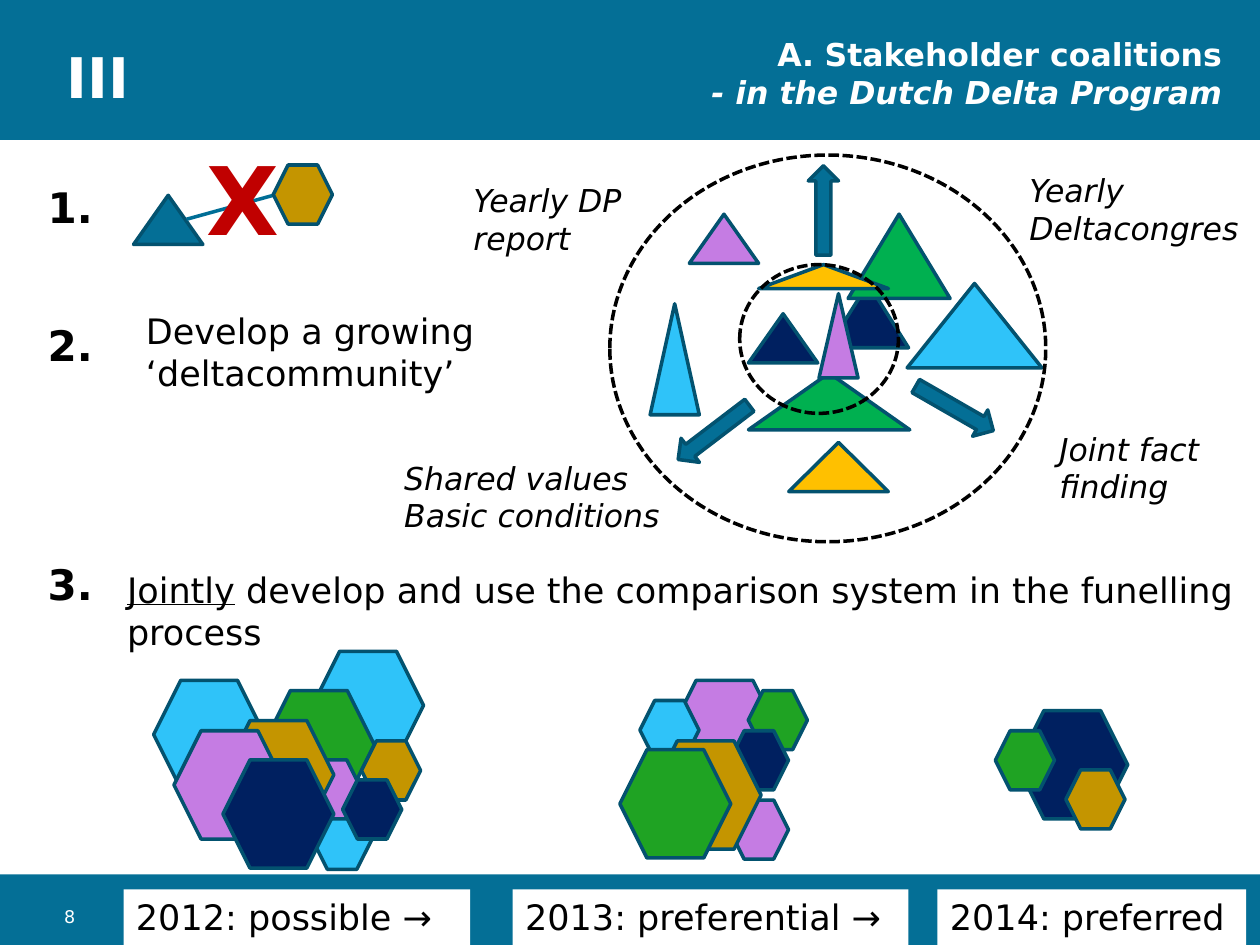
from dataclasses import dataclass

from lxml import etree
from pptx import Presentation
from pptx.dml.color import RGBColor
from pptx.enum import dml, shapes, text
from pptx.oxml import ns
from pptx.util import Pt


@dataclass(frozen=True)
class Theme:
    font: str = "DejaVu Sans"
    teal: str = "046F96"
    edge: str = "03526F"
    link: str = "006E96"
    navy: str = "002060"
    sky: str = "2FC3F9"
    violet: str = "C57CE3"
    gold: str = "C49500"
    yellow: str = "FFC000"
    leaf: str = "1FA323"
    green: str = "00B050"
    red: str = "C00000"
    black: str = "000000"
    white: str = "FFFFFF"
    tiny: int = 10
    label: int = 18
    body: int = 20
    number: int = 24
    chapter: int = 32
    cross: int = 54
    line: int = 2


T = Theme()
KIND = shapes.MSO_SHAPE
LARGE, SMALL = (63.4, 61.9), (33.8, 33.8)


def write(tf, lines, size, color=T.black, align=text.PP_ALIGN.LEFT):
    """Each line is a list of runs: (wording, style letters from b, i, u)."""
    tf.word_wrap = True
    tf.vertical_anchor = text.MSO_ANCHOR.TOP
    for n, runs in enumerate(lines):
        p = tf.paragraphs[0] if n == 0 else tf.add_paragraph()
        p.alignment = align
        for wording, style in runs:
            r = p.add_run()
            r.text = wording
            f = r.font
            f.name, f.size = T.font, Pt(size)
            f.color.rgb = RGBColor.from_string(color)
            f.bold, f.italic, f.underline = (k in style for k in "biu")


def add_text(s, box, lines, size, color=T.black):
    tf = s.shapes.add_textbox(*map(Pt, box)).text_frame
    write(tf, lines, size, color)
    tf.auto_size = text.MSO_AUTO_SIZE.SHAPE_TO_FIT_TEXT
    return tf


def add_shape(parent, kind, box, fill=None, line=T.edge, rotation=0):
    sp = parent.add_shape(kind, *map(Pt, box))
    sp.shadow.inherit = False
    sp.rotation = rotation
    if fill:
        sp.fill.solid()
        sp.fill.fore_color.rgb = RGBColor.from_string(fill)
    else:
        sp.fill.background()
    if line:
        sp.line.color.rgb = RGBColor.from_string(line)
        sp.line.width = Pt(T.line)
    else:
        sp.line.fill.background()
    return sp


def add_band(s, box):
    band = add_shape(s.shapes, KIND.RECTANGLE, box, T.teal, None).element
    band.getparent().insert(2, band)  # behind the title


def header(s, box):
    x, y, w, h = box
    add_band(s, box)
    title = s.shapes.title
    title.left, title.top, title.width, title.height = map(
        Pt, (x + 388.1, y + 16.6, 317.5, 51.1))
    tf = title.text_frame
    # The first line is lettered, both lines hang
    for p in (tf.paragraphs[0], tf.add_paragraph()):
        pPr = p._p.get_or_add_pPr()
        pPr.set("marL", str(Pt(27)))
        pPr.set("indent", str(-Pt(27)))
    etree.SubElement(tf.paragraphs[0]._p.pPr, ns.qn("a:buAutoNum"),
                     type="alphaUcPeriod")
    wording = (("Stakeholder coalitions", False),
               ("- in the Dutch Delta Program", True))
    tf.word_wrap = True
    tf.auto_size = text.MSO_AUTO_SIZE.NONE
    tf.vertical_anchor = text.MSO_ANCHOR.TOP
    for p, (line, italic) in zip(tf.paragraphs, wording):
        p.alignment = text.PP_ALIGN.RIGHT
        r = p.add_run()
        r.text = line
        f = r.font
        f.name, f.size, f.bold, f.italic = T.font, Pt(T.label), True, italic
        f.color.rgb = RGBColor.from_string(T.white)
    add_text(s, (x + 31, y + 20.9, 79.2, 46.1), [[("III", "b")]],
             T.chapter, T.white)


def points(s, x):
    """Numbers down the left side and the wording of points 2 and 3."""
    for number, y in (("1.", 100.1), ("2.", 179.3), ("3.", 315.4)):
        add_text(s, (x, y, 62.6, 36), [[(number, "b")]], T.number)
    add_text(s, (x + 56.1, 173.5, 209.5, 55.4),
             [[("Develop a growing ‘deltacommunity’", "")]], T.body)
    add_text(s, (x + 45.3, 321.1, 654.5, 55.4),
             [[("Jointly", "u"),
               (" develop and use the comparison system in the funelling "
                "process", "")]], T.body)


def broken_link(s, x, y):
    """Triangle linked to a hexagon, crossed out."""
    parts = s.shapes.add_group_shape().shapes
    add_shape(parts, KIND.ISOSCELES_TRIANGLE, (x, y + 17.3, 39.6, 28.1), T.teal)
    link = parts.add_connector(shapes.MSO_CONNECTOR.STRAIGHT,
                               *map(Pt, (x + 30.3, y + 31, x + 79.9, y + 17.3)))
    link.line.color.rgb = RGBColor.from_string(T.link)
    link.line.width = Pt(T.line)
    etree.SubElement(link.element.spPr, ns.qn("a:effectLst"))
    add_shape(parts, KIND.HEXAGON, (x + 79.9, y, *SMALL), T.gold)
    add_text(s, (x + 34.6, y - 17.3, 79.2, 72.7), [[("X", "b")]],
             T.cross, T.red)


def community(s, box):
    """Stakeholders in two dashed rings, with arrows pointing outwards."""
    x, y, w, h = box
    for fill, dx, dy, tw, th in (
            (T.navy, 79.2, 90.7, 39.6, 28.1), (T.sky, 23, 85, 28.1, 63.4),
            (T.green, 79.2, 124.6, 92.2, 32.4),
            (T.yellow, 102.2, 164.2, 56.9, 28.1),
            (T.violet, 45.4, 33.8, 39.6, 28.1),
            (T.navy, 124.6, 73.4, 46.1, 36.7),
            (T.sky, 169.9, 73.4, 77, 48.2), (T.green, 136.1, 33.8, 58.3, 48.2),
            (T.yellow, 85, 62.6, 74.2, 13.7),
            (T.violet, 119.5, 79.2, 22.3, 48.2)):
        add_shape(s.shapes, KIND.ISOSCELES_TRIANGLE,
                  (x + dx, y + dy, tw, th), fill)
    for ring in ((x + 74.2, y + 62.6, 90.7, 85), box):
        sp = add_shape(s.shapes, KIND.OVAL, ring, line=T.black)
        sp.line.dash_style = dml.MSO_LINE.SQUARE_DOT
    for dx, dy, angle in ((96.5, 23, 270), (33.8, 149.8, 142.7),
                          (171.4, 136.1, 29.9)):
        add_shape(s.shapes, KIND.RIGHT_ARROW, (x + dx, y + dy, 51.1, 17.3),
                  T.teal, rotation=angle)
    # Labels around the outer ring
    for dx, dy, lw, lines in (
            (-85, 11.5, 108, ("Yearly DP", "report")),
            (232.6, 5.8, 139, ("Yearly Deltacongres",)),
            (-124.6, 169.9, 164.2, ("Shared values", "Basic conditions")),
            (249.8, 153.3, 105.1, ("Joint fact finding",))):
        add_text(s, (x + dx, y + dy, lw, 51.1),
                 [[(line, "i")] for line in lines], T.label)


def cluster(s, x, y, hexagons):
    for fill, size, dx, dy in hexagons:
        add_shape(s.shapes, KIND.HEXAGON, (x + dx, y + dy, *size), fill)


def funnel(s):
    """Clusters that shrink from year to year."""
    cluster(s, 87.8, 372.2, (
        (T.sky, LARGE, 90.8, 0), (T.leaf, LARGE, 62.7, 22.4),
        (T.gold, SMALL, 118.8, 51.2), (T.sky, LARGE, 0, 16.6),
        (T.sky, SMALL, 90.8, 90.8), (T.violet, SMALL, 85, 62),
        (T.navy, SMALL, 108, 73.5), (T.gold, LARGE, 39.6, 39.6),
        (T.violet, LARGE, 11.6, 45.4), (T.navy, LARGE, 39.6, 62)))
    cluster(s, 354.2, 388.8, (
        (T.violet, LARGE, 28.1, 0), (T.sky, SMALL, 11.5, 11.5),
        (T.leaf, SMALL, 73.4, 5.8), (T.violet, SMALL, 62.6, 68.4),
        (T.navy, SMALL, 62.6, 28.8), (T.gold, LARGE, 17.3, 34.6),
        (T.leaf, LARGE, 0, 39.6)))
    cluster(s, 568.8, 406.1, (
        (T.navy, LARGE, 12.2, 0), (T.gold, SMALL, 40.3, 33.8),
        (T.leaf, SMALL, 0, 11.5)))


def footer(s, box):
    x, y, w, h = box
    add_band(s, box)
    tf = add_text(s, (x + 36.7, y + 20.9, 149.8, 9.4), [[("8", "")]],
                  T.tiny, T.white)
    tf.margin_left = tf.margin_top = tf.margin_right = tf.margin_bottom = 0
    tf.auto_size = text.MSO_AUTO_SIZE.NONE
    tf.vertical_anchor = text.MSO_ANCHOR.BOTTOM
    for dx, width, stage in ((70.6, 198, "2012: possible →"),
                             (293, 226.1, "2013: preferential →"),
                             (535.7, 176.4, "2014: preferred")):
        sp = add_shape(s.shapes, KIND.RECTANGLE,
                       (x + dx, y + 8.6, width, 31.7), T.white, None)
        write(sp.text_frame, [[(stage, "")]], T.body)


def main():
    prs = Presentation()
    prs.slide_width, prs.slide_height = Pt(720), Pt(540)
    s = prs.slides.add_slide(prs.slide_layouts[5])
    header(s, (0, 0, 720, 79.9))
    points(s, 20.2)
    broken_link(s, 76.3, 94.3)
    community(s, (348.5, 88.6, 249.1, 221))
    funnel(s)
    footer(s, (0, 499.7, 720, 40.3))
    prs.save("out.pptx")


if __name__ == "__main__":
    main()
